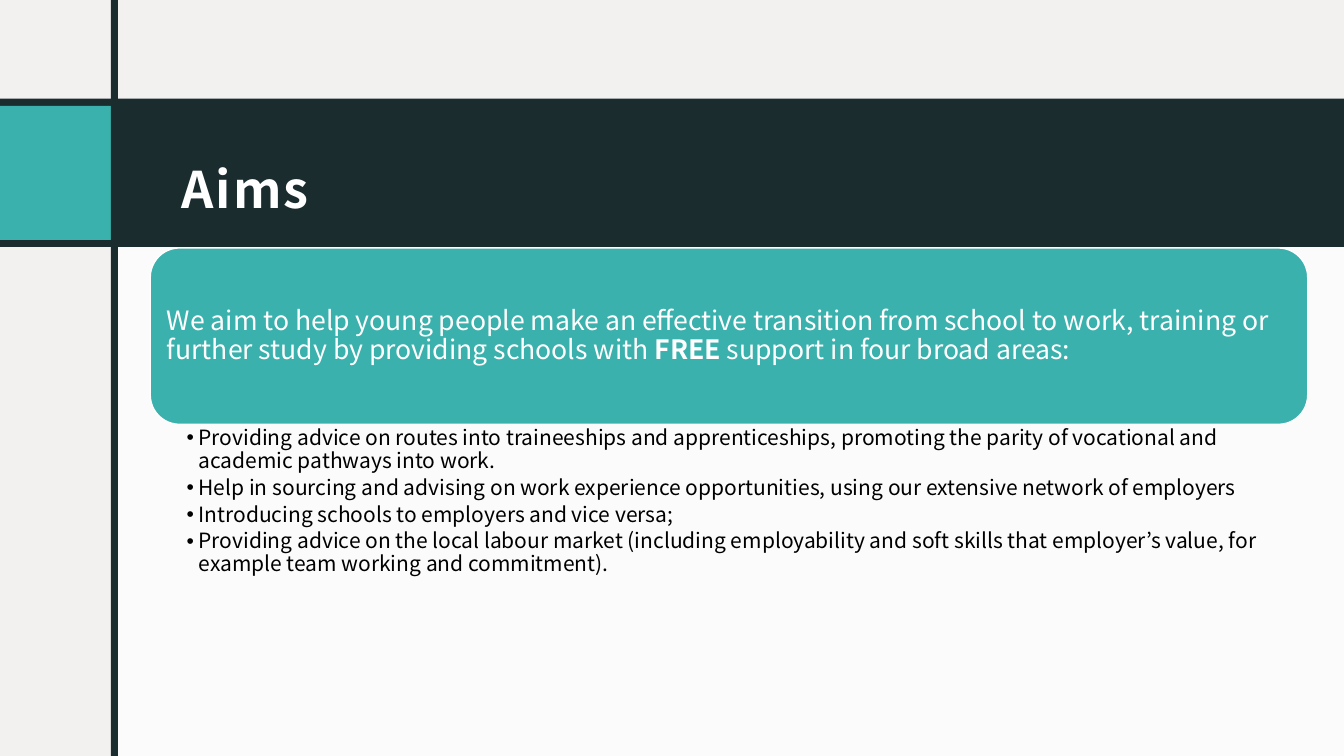
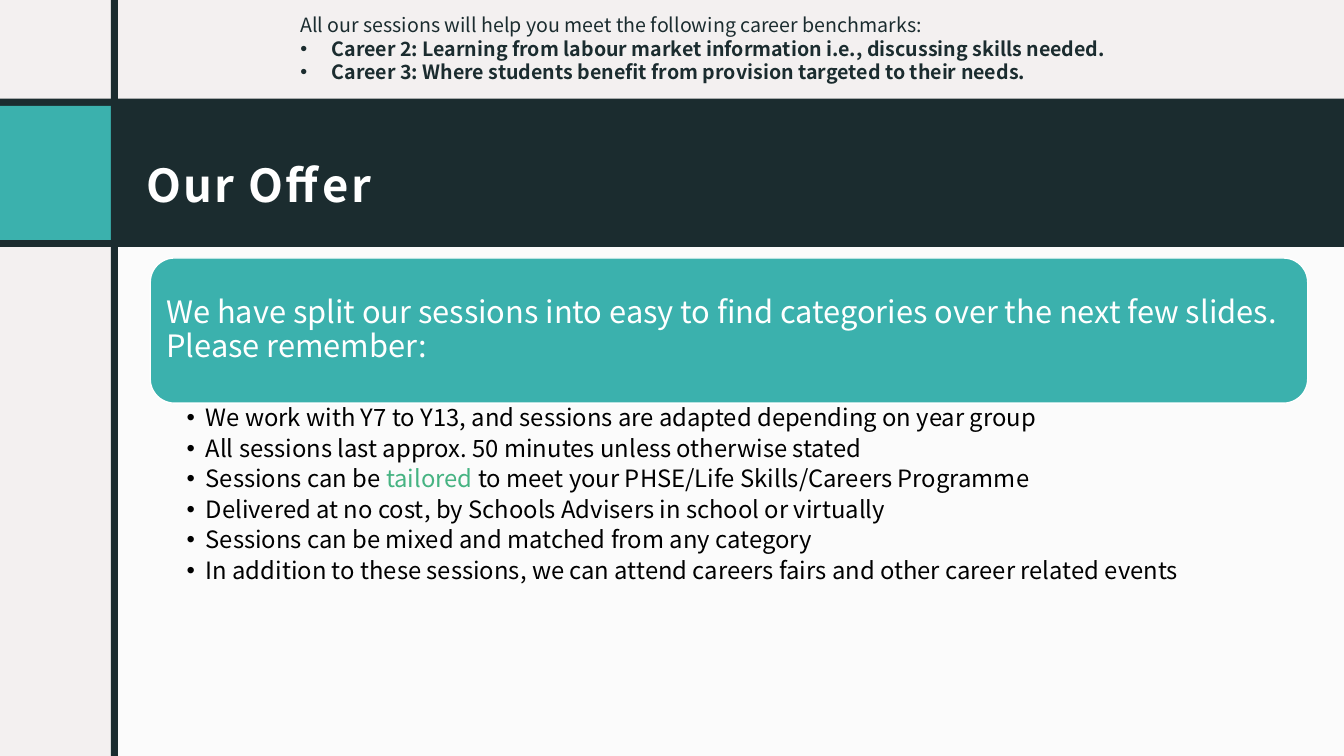
"""Build the two-slide deck on the aims and the offer of a schools support service."""
from lxml.etree import SubElement
from pptx import Presentation
from pptx.dml.color import RGBColor
from pptx.enum.shapes import MSO_SHAPE as SHAPE
from pptx.enum.text import MSO_ANCHOR as ANCHOR, PP_ALIGN as ALIGN
from pptx.oxml.ns import qn
from pptx.util import Inches, Pt

FONT = "Noto Sans CJK JP"
BULLET_FONT = "Arial"
PAPER = RGBColor(0xF3, 0xF0, 0xF0)
DARK = RGBColor(0x1B, 0x2C, 0x2F)
TEAL = RGBColor(0x3B, 0xB1, 0xAD)
GREEN = RGBColor(0x46, 0xB3, 0x82)
WHITE = RGBColor(0xFF, 0xFF, 0xFF)
BLACK = RGBColor(0, 0, 0)

WIDTH, HEIGHT = 13.33, 7.5
BAR = 0.07
BAR_X = 1.1
BAND_Y, BAND_H = 0.98, 1.47
CONTENT_X, CONTENT_W = 1.49, 11.48
SIDES = ("left", "top", "right", "bottom")

AIMS = {
    "title": ("Aims", 36, (1.68, 1.14, 1.65, 1.13)),
    "callout": [
        ("We aim to help young people make an effective transition from school to work, "
         "training or further study by providing schools with ", {}),
        ("FREE ", {"bold": True}),
        ("support in four broad areas:", {}),
    ],
    "callout_box": {"top": 2.46, "height": 1.75, "size": 19, "inset": 0.08},
    "points": [
        "Providing advice on routes into traineeships and apprenticeships, promoting "
        "the parity of vocational and academic pathways into work.",
        "Help in sourcing and advising on work experience opportunities, using our "
        "extensive network of employers",
        "Introducing schools to employers and vice versa;",
        "Providing advice on the local labour market (including employability and soft "
        "skills that employer’s value, for example team working and commitment).",
    ],
    "points_box": {"height": 2.92, "size": 15, "hang": 0.12, "right": 0.15},
}
OFFER = {
    "title": ("Our Offer", 32.4, (1.33, 1.13, 2.7, 1.11)),
    "callout": "We have split our sessions into easy to find categories over the next "
               "few slides. Please remember:",
    "callout_box": {"top": 2.56, "height": 1.44, "size": 22, "inset": 0.09},
    "points": [
        "We work with Y7 to Y13, and sessions are adapted depending on year group",
        "All sessions last approx. 50 minutes unless otherwise stated",
        [("Sessions can be ", {}), ("tailored ", {"color": GREEN}),
         ("to meet your PHSE/Life Skills/Careers Programme", {})],
        "Delivered at no cost, by Schools Advisers in school or virtually",
        "Sessions can be mixed and matched from any category",
        "In addition to these sessions, we can attend careers fairs and other career "
        "related events",
    ],
    "points_box": {"height": 3.04, "size": 17, "hang": 0.19, "right": 0.17},
}
BENCHMARK_INTRO = "All our sessions will help you meet the following career benchmarks:"
BENCHMARKS = [
    "Career 2: Learning from labour market information i.e., discussing skills needed.",
    "Career 3: Where students benefit from provision targeted to their needs.",
]


def add_box(slide, box, fill, kind=SHAPE.RECTANGLE, line=None, alpha=None):
    sp = slide.shapes.add_shape(kind, *map(Inches, box))
    sp.shadow.inherit = False
    sp.fill.solid()
    sp.fill.fore_color.rgb = fill
    if line is None:
        sp.line.fill.background()
    else:
        sp.line.color.rgb = line
        sp.line.width = Pt(1)
    if alpha is not None:
        color = sp.fill._xPr.find(qn("a:solidFill"))[0]
        SubElement(color, qn("a:alpha"), val=str(alpha * 1000))
    return sp


def add_text_box(slide, box):
    return slide.shapes.add_textbox(*map(Inches, box))


def set_frame(sp, insets, anchor=ANCHOR.TOP):
    tf = sp.text_frame
    tf.word_wrap = True
    tf.vertical_anchor = anchor
    for side, inset in zip(SIDES, insets):
        setattr(tf, f"margin_{side}", Inches(inset))
    return tf


def add_run(p, text, size, color, bold=False, tracking=None):
    r = p.add_run()
    r.text = text
    for name, value in {"name": FONT, "size": Pt(size), "bold": bold}.items():
        setattr(r.font, name, value)
    r.font.color.rgb = color
    if tracking:
        r.font._element.set("spc", str(int(tracking * 100)))


def add_paragraph(tf, content, spacing=1.0, after=0, hang=None, **style):
    p = tf.paragraphs[0] if not tf.paragraphs[0].runs else tf.add_paragraph()
    layout = {"alignment": ALIGN.LEFT, "line_spacing": spacing, "space_after": Pt(after)}
    for name, value in layout.items():
        setattr(p, name, value)
    if hang:
        pPr = p._p.get_or_add_pPr()
        pPr.set("marL", str(Inches(hang)))
        pPr.set("indent", str(-Inches(hang)))
        SubElement(pPr, qn("a:buFont"), typeface=BULLET_FONT)
        SubElement(pPr, qn("a:buChar"), char="•")
    runs = [(content, {})] if isinstance(content, str) else content
    for text, changes in runs:
        add_run(p, text, **{**style, **changes})


def add_title(slide, text, size, box):
    tf = set_frame(add_text_box(slide, box), (0.12, 0.12, 0.12, 0.1), ANCHOR.MIDDLE)
    add_paragraph(tf, text, spacing=1.5, size=size, color=WHITE, bold=True, tracking=1.5)


def add_callout(slide, content, top, height, size, inset):
    sp = add_box(slide, (CONTENT_X, top, CONTENT_W, height), TEAL,
                 SHAPE.ROUNDED_RECTANGLE, WHITE)
    tf = set_frame(sp, [inset] * 4, ANCHOR.MIDDLE)
    add_paragraph(tf, content, spacing=0.9, after=0.35 * size, size=size, color=WHITE)


def add_points(slide, points, top, height, size, hang, right):
    sp = add_text_box(slide, (CONTENT_X, top, CONTENT_W, height))
    tf = set_frame(sp, (0.36, 0.03, right, 0.03))
    for point in points:
        add_paragraph(tf, point, spacing=0.9, after=0.2 * size, hang=hang,
                      size=size, color=BLACK)


def add_benchmarks(slide):
    tf = set_frame(add_text_box(slide, (2.88, 0.08, 9.18, 0.81)), (0.1, 0.05, 0.1, 0.05))
    add_paragraph(tf, BENCHMARK_INTRO, size=14, color=DARK)
    for benchmark in BENCHMARKS:
        add_paragraph(tf, benchmark, hang=0.31, size=14, color=DARK, bold=True)


def add_frame(slide):
    slide.background.fill.solid()
    slide.background.fill.fore_color.rgb = PAPER
    panel_x, panel_y = 1.14, 2.33
    add_box(slide, (panel_x, panel_y, WIDTH - panel_x, HEIGHT - panel_y), WHITE, alpha=75)
    add_box(slide, (0, BAND_Y, WIDTH, BAND_H), DARK)
    add_box(slide, (0, BAND_Y + BAR, BAR_X, BAND_H - 2 * BAR), TEAL)
    add_box(slide, (BAR_X, 0, BAR, HEIGHT), DARK)


def add_slide(prs, content):
    slide = prs.slides.add_slide(prs.slide_layouts[6])
    add_frame(slide)
    add_title(slide, *content["title"])
    callout = content["callout_box"]
    add_callout(slide, content["callout"], **callout)
    add_points(slide, content["points"], callout["top"] + callout["height"],
               **content["points_box"])
    return slide


def main():
    prs = Presentation()
    prs.slide_width, prs.slide_height = Inches(WIDTH), Inches(HEIGHT)
    add_slide(prs, AIMS)
    add_benchmarks(add_slide(prs, OFFER))
    prs.save("out.pptx")


if __name__ == "__main__":
    main()
